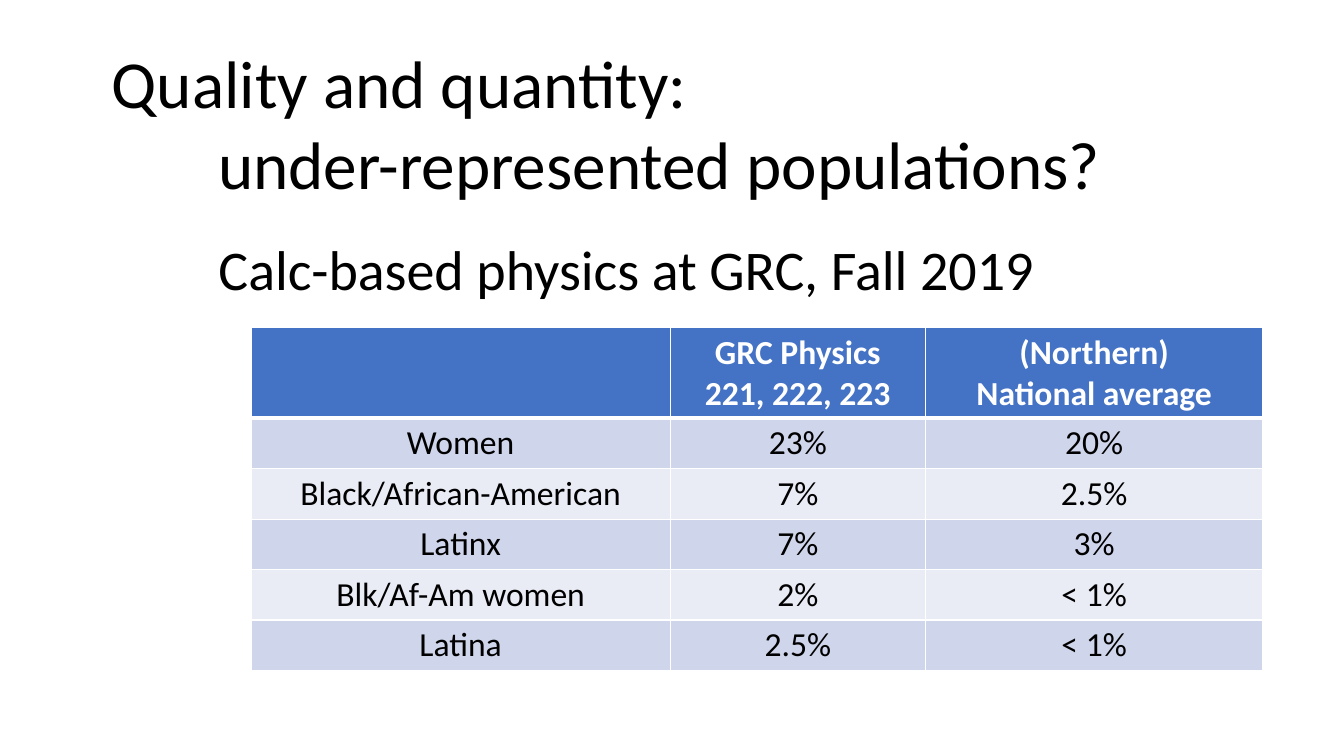
from lxml.etree import SubElement
from pptx import Presentation
from pptx.dml.color import RGBColor
from pptx.enum.text import MSO_ANCHOR, PP_ALIGN
from pptx.oxml.ns import qn
from pptx.util import Pt

BLACK = RGBColor(0x00, 0x00, 0x00)
WHITE = RGBColor(0xFF, 0xFF, 0xFF)
HEADER_BLUE = RGBColor(0x44, 0x72, 0xC4)
BAND_DARK = RGBColor(0xCF, 0xD5, 0xEA)
BAND_LIGHT = RGBColor(0xE9, 0xEB, 0xF5)

FONT = "Calibri"
ROWS = [
    ("", "GRC Physics\v221, 222, 223", "(Northern)\vNational average"),
    ("Women", "23%", "20%"),
    ("Black/African-American", "7%", "2.5%"),
    ("Latinx", "7%", "3%"),
    ("Blk/Af-Am women", "2%", "< 1%"),
    ("Latina", "2.5%", "< 1%"),
]
COLUMN_WIDTHS = [299.5, 182.2, 241.2]
HEADER_HEIGHT, ROW_HEIGHT = 64.8, 36


def add_heading(slide, text, left, top, width, height, size):
    frame = slide.shapes.add_textbox(Pt(left), Pt(top), Pt(width), Pt(height)).text_frame
    frame.word_wrap = True
    frame.text = text
    for line in frame.paragraphs:
        line.font.name = FONT
        line.font.size = Pt(size)
        line.font.color.rgb = BLACK
    return frame


def add_border(cell, side, width):
    border = SubElement(cell._tc.get_or_add_tcPr(), qn(f"a:{side}"), w=str(Pt(width)))
    fill = SubElement(border, qn("a:solidFill"))
    SubElement(fill, qn("a:srgbClr"), val=str(WHITE))


prs = Presentation()
prs.slide_width, prs.slide_height = Pt(960), Pt(540)
slide = prs.slides.add_slide(prs.slide_layouts[6])

add_heading(slide, "Calc-based physics at GRC, Fall 2019", 149, 164.2, 679.7, 55.4, 40)

populations = slide.shapes.add_table(
    len(ROWS), len(COLUMN_WIDTHS), Pt(179.3), Pt(234),
    Pt(sum(COLUMN_WIDTHS)), Pt(HEADER_HEIGHT + ROW_HEIGHT * (len(ROWS) - 1)),
).table
for column, width in zip(populations.columns, COLUMN_WIDTHS):
    column.width = Pt(width)

for r, values in enumerate(ROWS):
    is_header = r == 0
    populations.rows[r].height = Pt(HEADER_HEIGHT if is_header else ROW_HEIGHT)
    band = HEADER_BLUE if is_header else BAND_DARK if r % 2 else BAND_LIGHT
    for c, value in enumerate(values):
        cell = populations.cell(r, c)
        cell.text = value
        cell.margin_top = cell.margin_bottom = Pt(3.3)
        cell.vertical_anchor = MSO_ANCHOR.TOP
        for side in ("lnL", "lnR"):
            add_border(cell, side, 1)
        add_border(cell, "lnT", 3 if r == 1 else 1)
        add_border(cell, "lnB", 3 if is_header else 1)
        cell.fill.solid()
        cell.fill.fore_color.rgb = band
        entry = cell.text_frame.paragraphs[0]
        entry.alignment = PP_ALIGN.CENTER
        entry.font.name = FONT
        entry.font.size = Pt(24)
        entry.font.bold = is_header
        entry.font.color.rgb = WHITE if is_header else BLACK

title = add_heading(
    slide, "Quality and quantity:\nunder-represented populations?", 72.7, 26, 862.6, 124, 48
)
title.paragraphs[1]._p.get_or_add_pPr().set("marL", str(Pt(76)))

prs.save("out.pptx")
